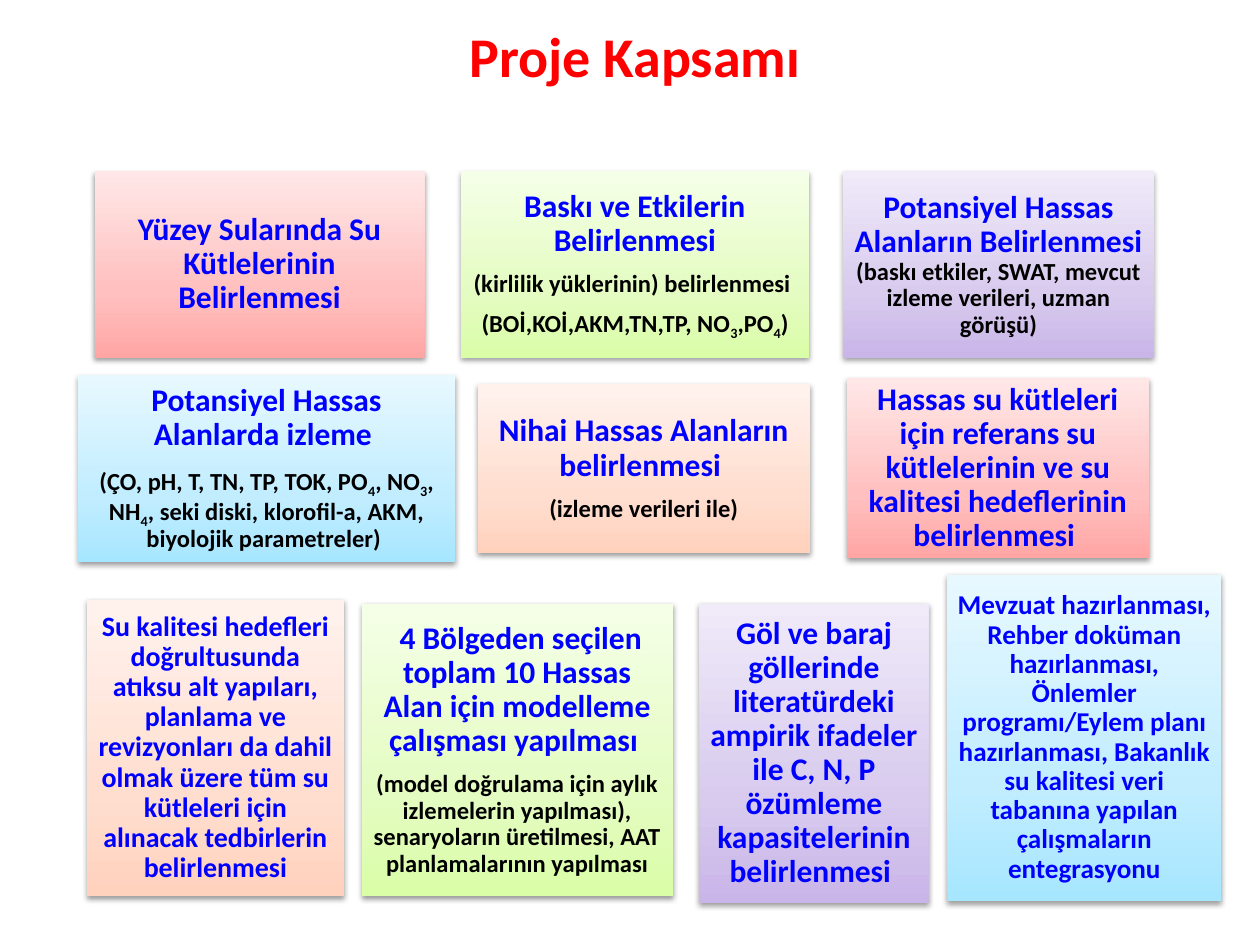
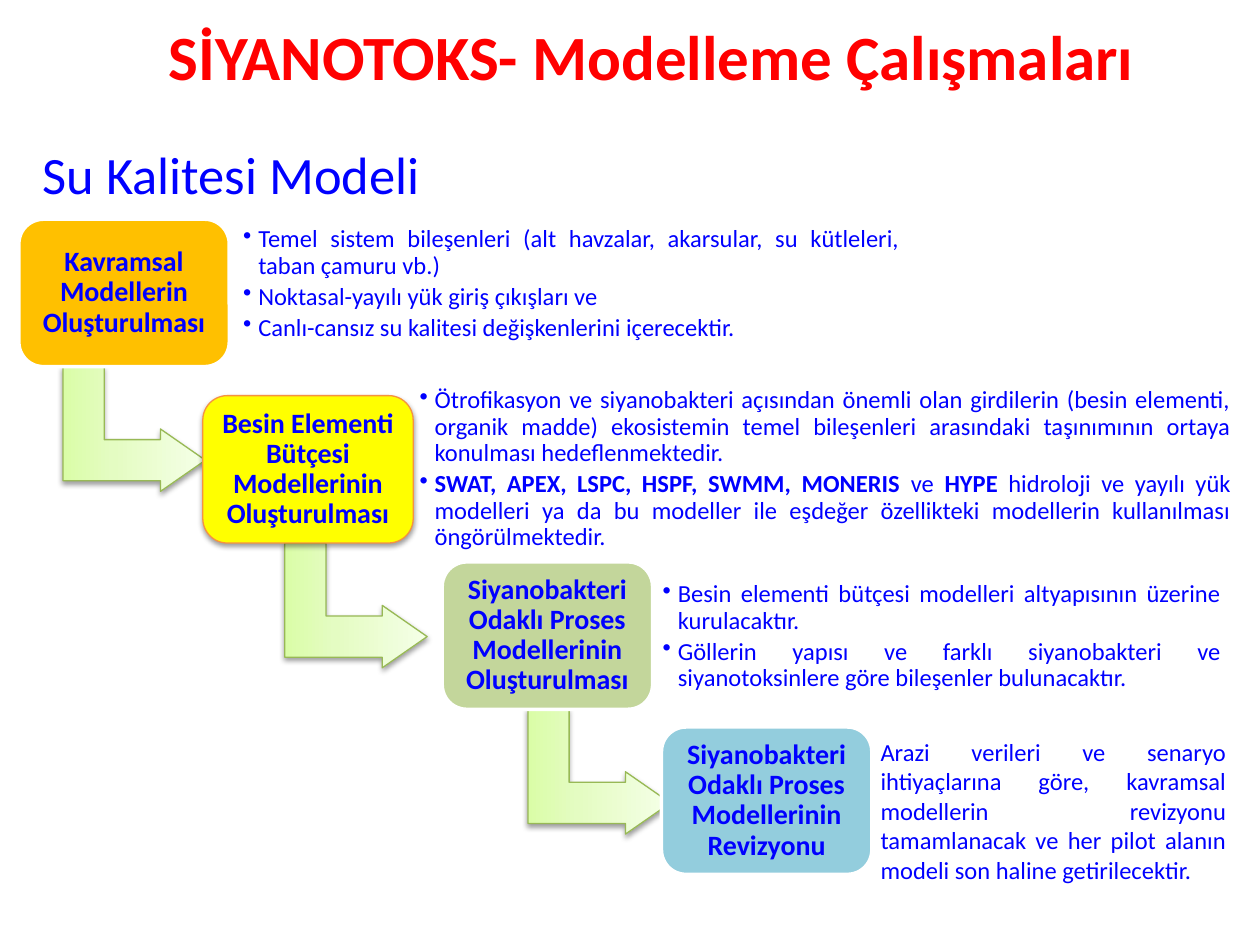
"""Builds two slides on project scope and water quality modelling steps."""
from dataclasses import dataclass

from lxml.etree import SubElement
from pptx import Presentation
from pptx.dml.color import RGBColor
from pptx.enum.shapes import MSO_SHAPE
from pptx.enum.text import MSO_ANCHOR, PP_ALIGN
from pptx.oxml.ns import qn
from pptx.util import Emu, Pt

PX = 9144


@dataclass(frozen=True)
class Theme:
    font: str = "Calibri"
    red: str = "FF0000"
    blue: str = "0000FF"
    black: str = "000000"
    white: str = "FFFFFF"
    arrow_line: str = "98B955"
    yellow_line: str = "F69240"
    rose: tuple = ("FFA6A5", "FFC0BF", "FFE7E7")
    lime: tuple = ("DAFDA7", "E4FCC2", "F5FFE7")
    violet: tuple = ("C9B5E8", "D8CBEE", "F0EAF9")
    sky: tuple = ("A7E6FF", "C1EDFF", "E7F8FF")
    peach: tuple = ("FFD2BD", "FFDED0", "FFF2ED")
    subtitle: float = 30
    heading: float = 18
    step: float = 16
    compact: float = 15.5
    body: float = 14


THEME = Theme()


def heading(text, size=THEME.heading):
    return text, size, THEME.blue


def detail(text):
    return text, THEME.body, THEME.black


def write(frame, paragraphs, size=THEME.body, color=THEME.blue, bold=False,
          align=PP_ALIGN.CENTER, anchor=MSO_ANCHOR.MIDDLE, inset=(7, 7),
          spacing=0.9, after=0.0, bullet=False):
    """Fill a frame; ~x~ marks subscript and *x* marks bold."""
    frame.word_wrap = True
    frame.vertical_anchor = anchor
    frame.margin_left = frame.margin_right = Emu(inset[0] * PX)
    frame.margin_top = frame.margin_bottom = Emu(inset[1] * PX)
    for index, spans in enumerate(paragraphs):
        paragraph = frame.add_paragraph() if index else frame.paragraphs[0]
        if isinstance(spans, str):
            spans = [(spans, size, color)]
        paragraph.alignment = align
        paragraph.line_spacing = spacing
        paragraph.space_after = Pt(round(spans[-1][1] * after * 1.2, 1))
        if bullet:
            properties = paragraph._p.get_or_add_pPr()
            properties.set("marL", str(12 * PX))
            properties.set("indent", str(-12 * PX))
            SubElement(properties, qn("a:buChar")).set("char", "•")
        for text, span_size, span_color in spans:
            for i, strong_part in enumerate(text.split("*")):
                for j, part in enumerate(strong_part.split("~")):
                    if not part:
                        continue
                    run = paragraph.add_run()
                    run.text = part
                    run.font.name = THEME.font
                    run.font.size = Pt(span_size)
                    run.font.bold = bold or i % 2 == 1
                    run.font.color.rgb = RGBColor.from_string(span_color)
                    if j % 2:
                        run._r.get_or_add_rPr().set("baseline", "-25000")


class Deck:
    """Holds the theme, the presentation and the current slide."""

    def __init__(self, theme):
        self.theme = theme
        self.presentation = Presentation()
        self.presentation.slide_width = Emu(1000 * PX)
        self.presentation.slide_height = Emu(750 * PX)
        self.slide = None

    def new_slide(self):
        self.slide = self.presentation.slides.add_slide(self.presentation.slide_layouts[6])

    def text(self, area, paragraphs, **style):
        label = self.slide.shapes.add_textbox(*(Emu(v * PX) for v in area))
        write(label.text_frame, paragraphs, **style)

    def title(self, left, text, size):
        self.text((left, 0, 900, 88), [text], size=size, color=self.theme.red,
                  bold=True, inset=(10, 5), spacing=1.0)

    def shape(self, kind, area, fill, line=None, width=0.75, shadow=True):
        shape = self.slide.shapes.add_shape(kind, *(Emu(v * PX) for v in area))
        if isinstance(fill, tuple):
            self.gradient(shape, fill)
        else:
            shape.fill.solid()
            shape.fill.fore_color.rgb = RGBColor.from_string(fill)
        if line:
            shape.line.color.rgb = RGBColor.from_string(line)
            shape.line.width = Pt(width)
        else:
            shape.line.fill.background()
        shape.shadow.inherit = False
        if shadow:
            self.drop_shadow(shape)
        return shape

    def gradient(self, shape, colors):
        shape.fill.gradient()
        shape.fill.gradient_angle = 90
        stops = shape._element.spPr.find(".//" + qn("a:gsLst"))
        stops.clear()
        for position, color in zip((0, 35, 100), colors):
            stop = SubElement(stops, qn("a:gs"), pos=str(position * 1000))
            SubElement(stop, qn("a:srgbClr"), val=color)

    def drop_shadow(self, shape):
        effects = shape._element.spPr.find(qn("a:effectLst"))
        outer = SubElement(effects, qn("a:outerShdw"), blurRad="40000",
                           dist="20000", dir="5400000", rotWithShape="0")
        color = SubElement(outer, qn("a:srgbClr"), val=self.theme.black)
        SubElement(color, qn("a:alpha"), val="38000")

    def card(self, area, fill, paragraphs):
        card = self.shape(MSO_SHAPE.RECTANGLE, area, fill)
        write(card.text_frame, paragraphs, bold=True, after=0.35)

    def step(self, left, top, name, fill, line, width, shadow):
        step = self.shape(MSO_SHAPE.ROUNDED_RECTANGLE, (left, top, 167, 117),
                          fill, line, width, shadow)
        write(step.text_frame, [name], size=self.theme.step, bold=True, after=0.35)

    def bent_arrow(self, left, top):
        arrow = self.shape(MSO_SHAPE.BENT_UP_ARROW, (left, top, 99, 113),
                           self.theme.lime, self.theme.arrow_line)
        arrow.rotation = 90
        for index, ratio in enumerate((0.33, 0.25, 0.36)):
            arrow.adjustments[index] = ratio

    def bullets(self, area, items):
        self.text(area, items, align=PP_ALIGN.JUSTIFY, inset=(6, 6), after=0.15, bullet=True)


def project_scope(deck):
    theme = deck.theme
    deck.new_slide()
    deck.title(59, "Proje Kapsamı ", 32)
    cards = [
        ((75, 136, 262, 148), theme.rose,
         [[heading("Yüzey Sularında Su Kütlelerinin Belirlenmesi")]]),
        ((366, 136, 276, 148), theme.lime,
         [[heading("Baskı ve Etkilerin Belirlenmesi")],
          [detail("(kirlilik yüklerinin) belirlenmesi ")],
          [detail("(BOİ,KOİ,AKM,TN,TP, NO~3~,PO~4~)")]]),
        ((669, 136, 247, 148), theme.violet,
         [[heading("Potansiyel Hassas Alanların Belirlenmesi "),
           detail("(baskı etkiler, SWAT, mevcut izleme verileri, uzman görüşü)")]]),
        ((62, 298, 299, 148), theme.sky,
         [[heading("Potansiyel Hassas Alanlarda izleme ")],
          [detail("(ÇO, pH, T, TN, TP, TOK, PO~4~, NO~3~, NH~4~, seki diski, "
                  "klorofil-a, AKM, biyolojik parametreler) ")]]),
        ((379, 305, 264, 134), theme.peach,
         [[heading("Nihai Hassas Alanların belirlenmesi ")],
          [detail("(izleme verileri ile)")]]),
        ((672, 300, 240, 143), theme.rose,
         [[heading("Hassas su kütleleri için referans su kütlelerinin ve su "
                   "kalitesi hedeflerinin belirlenmesi ")]]),
        ((287, 479, 247, 232), theme.lime,
         [[heading(" 4 Bölgeden seçilen toplam 10 Hassas Alan için modelleme "
                   "çalışması yapılması ")],
          [detail("(model doğrulama için aylık izlemelerin yapılması), "
                  "senaryoların üretilmesi, AAT planlamalarının yapılması")]]),
        ((555, 479, 182, 238), theme.violet,
         [[heading("Göl ve baraj göllerinde literatürdeki ampirik ifadeler ile "
                   "C, N, P özümleme kapasitelerinin belirlenmesi ")]]),
        ((752, 456, 217, 259), theme.sky,
         [[heading("Mevzuat hazırlanması, Rehber doküman hazırlanması, Önlemler "
                   "programı/Eylem planı hazırlanması, Bakanlık su kalitesi veri "
                   "tabanına yapılan çalışmaların entegrasyonu", theme.compact)]]),
        ((69, 476, 204, 235), theme.peach,
         [[heading("Su kalitesi hedefleri doğrultusunda atıksu alt yapıları, "
                   "planlama ve revizyonları da dahil olmak üzere tüm su kütleleri "
                   "için alınacak tedbirlerin belirlenmesi", theme.step)]]),
    ]
    for area, fill, paragraphs in cards:
        deck.card(area, fill, paragraphs)


def modelling_steps(deck):
    theme = deck.theme
    deck.new_slide()
    deck.text((24, 108, 971, 60), ["Su Kalitesi Modeli"], size=theme.subtitle,
              align=PP_ALIGN.LEFT, anchor=MSO_ANCHOR.TOP, inset=(10, 5), spacing=1.0)
    plain = (theme.white, 2, False)
    raised = (theme.yellow_line, 0.75, True)
    steps = [
        (15, 174, "Kavramsal Modellerin Oluşturulması", "FFC000", plain, 57,
         (187, 178, 533, 95),
         ["Temel sistem bileşenleri (alt havzalar, akarsular, su kütleleri, "
          "taban çamuru vb.)",
          "Noktasal-yayılı yük giriş çıkışları ve",
          "Canlı-cansız su kalitesi değişkenlerini içerecektir."]),
        (161, 314, "Besin Elementi Bütçesi Modellerinin Oluşturulması", "FFFF00",
         raised, 233, (327, 305, 656, 135),
         ["Ötrofikasyon ve siyanobakteri açısından önemli olan girdilerin (besin "
          "elementi, organik madde) ekosistemin temel bileşenleri arasındaki "
          "taşınımının ortaya konulması hedeflenmektedir. ",
          "*SWAT, APEX, LSPC, HSPF, SWMM, MONERIS* ve *HYPE* hidroloji ve yayılı "
          "yük modelleri ya da bu modeller ile eşdeğer özellikteki modellerin "
          "kullanılması öngörülmektedir."]),
        (351, 446, "Siyanobakteri Odaklı Proses Modellerinin Oluşturulması",
         "C3D69B", plain, 426, (520, 458, 455, 95),
         ["Besin elementi bütçesi modelleri altyapısının üzerine kurulacaktır.",
          "Göllerin yapısı ve farklı siyanobakteri ve siyanotoksinlere göre "
          "bileşenler bulunacaktır."]),
    ]
    for left, top, name, fill, outline, arrow_left, area, items in steps:
        deck.bent_arrow(arrow_left, top + 110)
        deck.step(left, top, name, fill, *outline)
        deck.bullets(area, items)
    deck.step(525, 577, "Siyanobakteri Odaklı Proses Modellerinin Revizyonu",
              "93CDDD", *plain)
    deck.text((689, 580, 294, 128),
              ["Arazi verileri ve senaryo ihtiyaçlarına göre, kavramsal modellerin "
               "revizyonu tamamlanacak ve her pilot alanın modeli son haline "
               "getirilecektir. "],
              align=PP_ALIGN.JUSTIFY, anchor=MSO_ANCHOR.TOP, inset=(10, 5), spacing=1.0)
    deck.title(67, "SİYANOTOKS- Modelleme Çalışmaları", 36)


def main():
    deck = Deck(THEME)
    project_scope(deck)
    modelling_steps(deck)
    deck.presentation.save("out.pptx")


if __name__ == "__main__":
    main()
